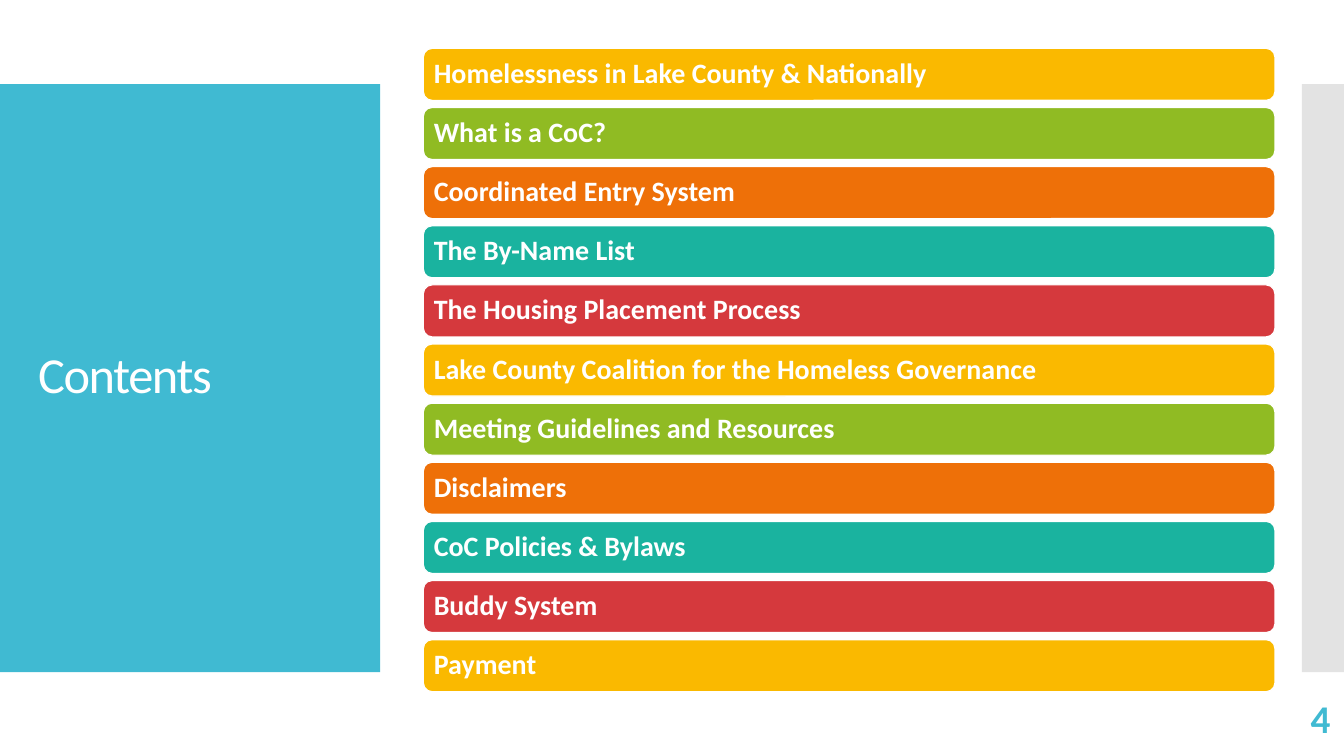
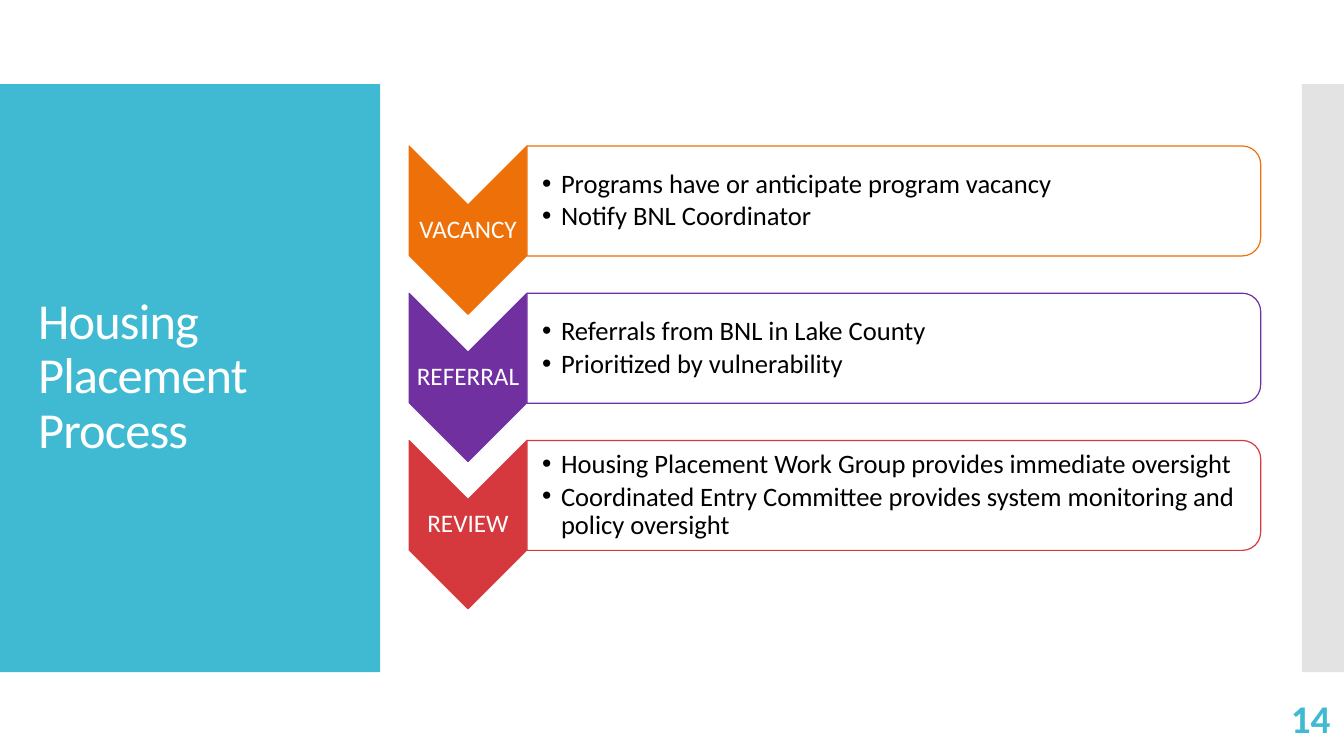
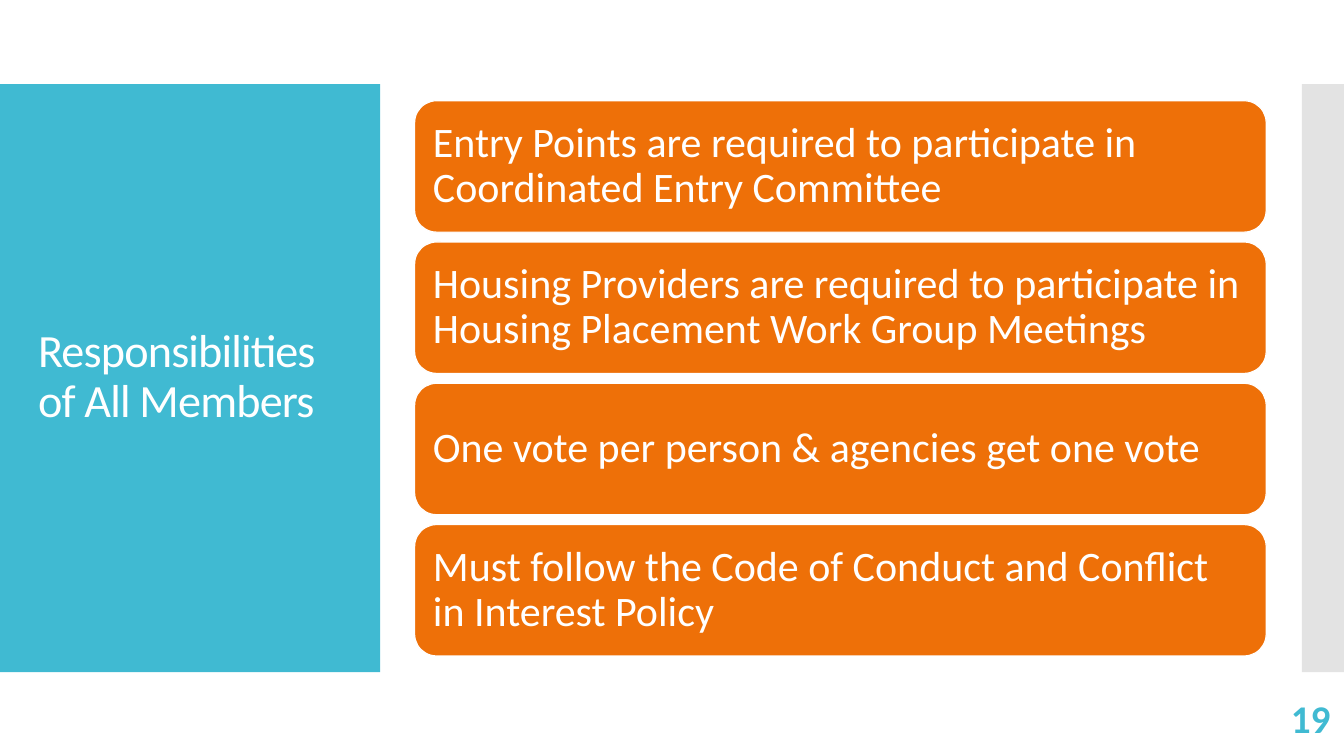
from dataclasses import dataclass

from lxml.etree import SubElement
from pptx import Presentation
from pptx.dml.color import RGBColor
from pptx.enum.shapes import MSO_SHAPE
from pptx.enum.text import MSO_ANCHOR, PP_ALIGN
from pptx.oxml.ns import qn
from pptx.shapes.autoshape import Shape
from pptx.slide import Slide
from pptx.text.text import TextFrame
from pptx.util import Cm, Pt


@dataclass(frozen=True)
class Theme:
    font: str = "Calibri"
    white: str = "FFFFFF"
    black: str = "000000"
    accent: str = "40BAD2"
    side: str = "C8C8C8"
    yellow: str = "FAB900"
    green: str = "90BB23"
    orange: str = "EE7008"
    teal: str = "1AB39F"
    red: str = "D5393D"
    purple: str = "7030A0"
    title_size: float = 36
    small_title_size: float = 33
    number_size: float = 28
    card_size: float = 30
    topic_size: float = 20
    bullet_size: float = 19
    step_size: float = 18
    outline: float = 0.85
    line_spacing: float = 0.9


THEME = Theme()


@dataclass(frozen=True)
class Box:
    """A rectangle in centimetres."""
    left: float
    top: float
    width: float
    height: float

    def below(self, distance: float) -> "Box":
        return Box(self.left, self.top + distance, self.width, self.height)

    def turned(self) -> "Box":
        """The frame that covers this box after a quarter turn."""
        shift = (self.width - self.height) / 2
        return Box(self.left + shift, self.top - shift, self.height, self.width)

    def lengths(self) -> tuple[Cm, Cm, Cm, Cm]:
        return Cm(self.left), Cm(self.top), Cm(self.width), Cm(self.height)


@dataclass(frozen=True)
class TextStyle:
    size: float
    color: str = THEME.white
    bold: bool = False
    align: PP_ALIGN = PP_ALIGN.LEFT
    tracking: float = 0
    space_after: float = 0
    bullet_indent: float = 0


@dataclass(frozen=True)
class Insets:
    left: float = 0.25
    top: float = 0.13
    right: float = 0.25
    bottom: float = 0.13


@dataclass(frozen=True)
class Bar:
    text: str
    color: str


@dataclass(frozen=True)
class Step:
    name: str
    color: str
    points: tuple[str, ...]


SIDE_PANEL = Box(0, 2.12, 9.58, 14.82)
EDGE_BAND = Box(32.81, 2.12, 1.06, 14.82)
TITLE = Box(0.71, 3.12, 8.18, 12.78)
PAGE_NUMBER = Box(29.54, 17.65, 4.24, 1.02)

TOPIC_COLORS = (THEME.yellow, THEME.green, THEME.orange, THEME.teal, THEME.red)
TOPICS = (
    "Homelessness in Lake County & Nationally",
    "What is a CoC?",
    "Coordinated Entry System",
    "The By-Name List",
    "The Housing Placement Process",
    "Lake County Coalition for the Homeless Governance",
    "Meeting Guidelines and Resources",
    "Disclaimers",
    "CoC Policies & Bylaws",
    "Buddy System",
    "Payment",
)
STEPS = (
    Step("VACANCY", THEME.orange, (
        "Programs have or anticipate program vacancy",
        "Notify BNL Coordinator")),
    Step("REFERRAL", THEME.purple, (
        "Referrals from BNL in Lake County",
        "Prioritized by vulnerability")),
    Step("REVIEW", THEME.red, (
        "Housing Placement Work Group provides immediate oversight",
        "Coordinated Entry Committee provides system monitoring and policy oversight")),
)
RESPONSIBILITIES = (
    "Entry Points are required to participate in Coordinated Entry Committee",
    "Housing Providers are required to participate in Housing Placement Work Group Meetings",
    "One vote per person & agencies get one vote",
    "Must follow the Code of Conduct and Conflict in Interest Policy",
)


def write_text(frame: TextFrame, lines: tuple[str, ...], style: TextStyle,
               insets: Insets = Insets()) -> None:
    frame.word_wrap = True
    frame.vertical_anchor = MSO_ANCHOR.MIDDLE
    frame.margin_left, frame.margin_right = Cm(insets.left), Cm(insets.right)
    frame.margin_top, frame.margin_bottom = Cm(insets.top), Cm(insets.bottom)
    for index, line in enumerate(lines):
        paragraph = frame.add_paragraph() if index else frame.paragraphs[0]
        paragraph.alignment = style.align
        paragraph.line_spacing = THEME.line_spacing
        paragraph.space_after = Pt(style.space_after)
        if style.bullet_indent:
            properties = paragraph._p.get_or_add_pPr()
            indent = Cm(style.bullet_indent)
            properties.set("marL", str(indent))
            properties.set("indent", str(-indent))
            SubElement(properties, qn("a:buFont")).set("typeface", "Arial")
            SubElement(properties, qn("a:buChar")).set("char", "•")
        run = paragraph.add_run()
        run.text = line
        run.font.name = THEME.font
        run.font.size = Pt(style.size)
        run.font.bold = style.bold
        run.font.color.rgb = RGBColor.from_string(style.color)
        if style.tracking:
            run._r.get_or_add_rPr().set("spc", str(round(style.tracking * 100)))


def add_text(slide: Slide, box: Box, lines: tuple[str, ...], style: TextStyle,
             insets: Insets = Insets()) -> None:
    write_text(slide.shapes.add_textbox(*box.lengths()).text_frame, lines, style, insets)


def add_filled(slide: Slide, kind: MSO_SHAPE, box: Box, fill: str,
               line: str | None = None) -> Shape:
    shape = slide.shapes.add_shape(kind, *box.lengths())
    shape.shadow.inherit = False
    shape.fill.solid()
    shape.fill.fore_color.rgb = RGBColor.from_string(fill)
    if line:
        shape.line.color.rgb = RGBColor.from_string(line)
        shape.line.width = Pt(THEME.outline)
    else:
        shape.line.fill.background()
    return shape


def add_base_slide(presentation: Presentation, title: str, number: int,
                   title_size: float = THEME.title_size, tracking: float = -0.6) -> Slide:
    """Add a slide with the side panel, edge band, title and page number."""
    slide = presentation.slides.add_slide(presentation.slide_layouts[6])
    add_filled(slide, MSO_SHAPE.RECTANGLE, SIDE_PANEL, THEME.accent)
    band = add_filled(slide, MSO_SHAPE.RECTANGLE, EDGE_BAND, THEME.side)
    band_color = band._element.spPr.find(qn("a:solidFill")).find(qn("a:srgbClr"))
    SubElement(band_color, qn("a:alpha")).set("val", "50000")
    add_text(slide, TITLE, (title,), TextStyle(title_size, tracking=tracking))
    add_text(slide, PAGE_NUMBER, (str(number),),
             TextStyle(THEME.number_size, THEME.accent, bold=True, align=PP_ALIGN.RIGHT))
    return slide


def add_bars(slide: Slide, bars: list[Bar], first: Box, pitch: float,
             style: TextStyle, inset: float) -> None:
    """Stack rounded bars at an equal pitch."""
    for index, bar in enumerate(bars):
        shape = add_filled(slide, MSO_SHAPE.ROUNDED_RECTANGLE, first.below(index * pitch),
                           bar.color, THEME.white)
        write_text(shape.text_frame, (bar.text,), style, Insets(inset, inset, inset, inset))


def add_step(slide: Slide, step: Step, top: float) -> None:
    """Draw a downward chevron with its name and the panel of points beside it."""
    chevron = Box(10.31, top, 2.97, 4.24)
    panel = Box(chevron.left + chevron.width, top, 18.49, 2.77)
    label = Box(chevron.left, top + 1.48, chevron.width, 1.28)
    for kind, box, fill in ((MSO_SHAPE.CHEVRON, chevron, step.color),
                            (MSO_SHAPE.ROUND_2_SAME_RECTANGLE, panel, THEME.white)):
        add_filled(slide, kind, box.turned(), fill, step.color).rotation = 90
    add_text(slide, label, (step.name,),
             TextStyle(THEME.step_size, align=PP_ALIGN.CENTER), Insets(0.03, 0.03, 0.03, 0.03))
    add_text(slide, panel, step.points,
             TextStyle(THEME.bullet_size, THEME.black, space_after=2.85, bullet_indent=0.48),
             Insets(0.38, 0.03, 0.18, 0.03))


def main() -> None:
    presentation = Presentation()
    presentation.slide_width, presentation.slide_height = Cm(33.87), Cm(19.05)

    contents = add_base_slide(presentation, "Contents", 4, tracking=-1)
    topics = [Bar(topic, TOPIC_COLORS[index % len(TOPIC_COLORS)])
              for index, topic in enumerate(TOPICS)]
    add_bars(contents, topics, Box(10.67, 1.22, 21.46, 1.31), 1.49,
             TextStyle(THEME.topic_size, bold=True), 0.2)

    process = add_base_slide(presentation, "Housing Placement Process", 14)
    for index, step in enumerate(STEPS):
        add_step(process, step, 3.68 + index * 3.71)

    members = add_base_slide(presentation, "Responsibilities of All Members", 19,
                             THEME.small_title_size)
    cards = [Bar(text, THEME.orange) for text in RESPONSIBILITIES]
    add_bars(members, cards, Box(10.45, 2.54, 21.46, 3.31), 3.56,
             TextStyle(THEME.card_size), 0.3)

    presentation.save("out.pptx")


if __name__ == "__main__":
    main()
